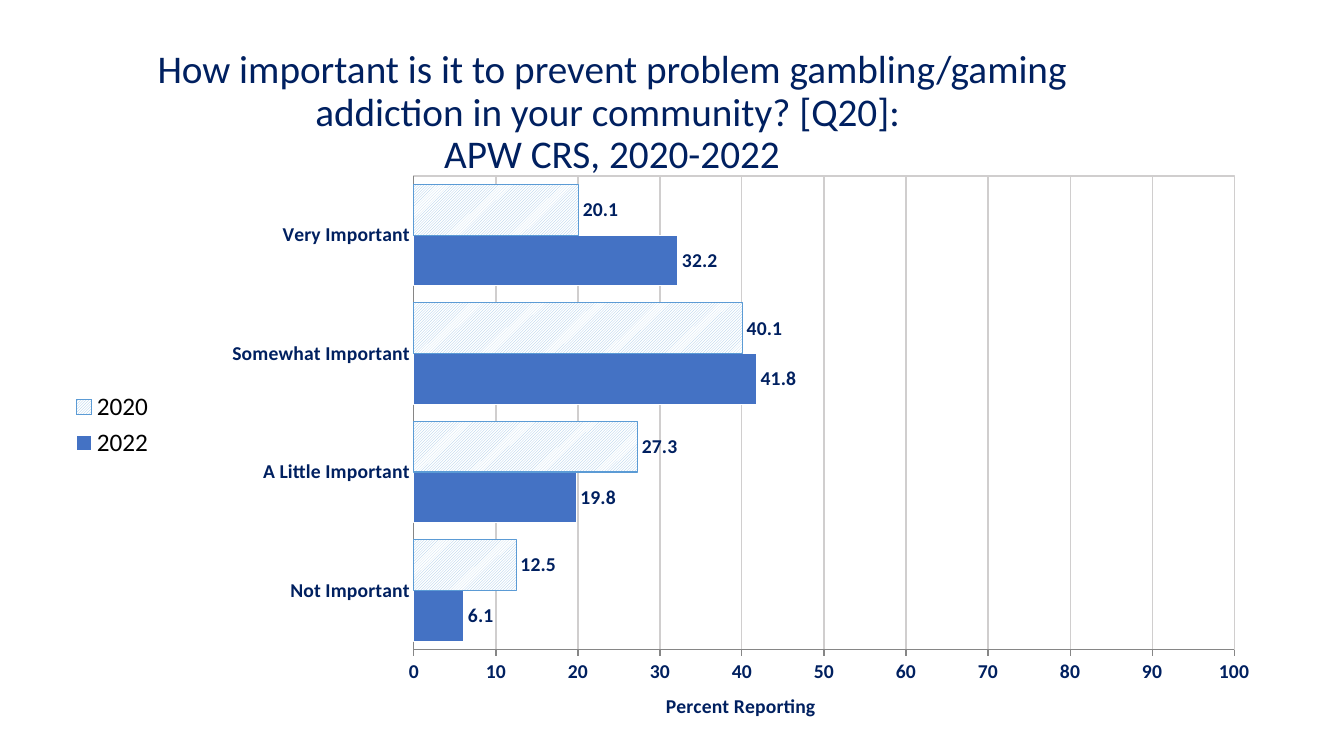
from pptx import Presentation
from pptx.chart.data import CategoryChartData
from pptx.dml.color import RGBColor
from pptx.enum.chart import (XL_CHART_TYPE, XL_LABEL_POSITION,
                             XL_LEGEND_POSITION, XL_TICK_MARK)
from pptx.enum.dml import MSO_PATTERN
from pptx.enum.text import MSO_ANCHOR, PP_ALIGN
from pptx.oxml import parse_xml
from pptx.util import Inches, Pt

BARS = XL_CHART_TYPE.BAR_CLUSTERED
OUTER = XL_LABEL_POSITION.OUTSIDE_END
LEFT = XL_LEGEND_POSITION.LEFT
NO_TICK, TICK = XL_TICK_MARK.NONE, XL_TICK_MARK.OUTSIDE
HATCH = MSO_PATTERN.LIGHT_UPWARD_DIAGONAL
MIDDLE, CENTER = MSO_ANCHOR.MIDDLE, PP_ALIGN.CENTER

COLORS = {"navy": "002060", "black": "000000", "white": "FFFFFF",
          "blue": "4472C4", "sky": "9DC3E6", "edge": "5B9BD5",
          "grid": "D0CECE", "axis": "868686"}
SPACES = ('xmlns:c="http://schemas.openxmlformats.org/drawingml/2006/chart" '
          'xmlns:a="http://schemas.openxmlformats.org/drawingml/2006/main"')
LEVELS = ["Not Important", "A Little Important",
          "Somewhat Important", "Very Important"]
YEARS = {"2022": [6.1, 19.8, 41.8, 32.2], "2020": [12.5, 27.3, 40.1, 20.1]}


def color(name):
    return RGBColor.from_string(COLORS[name])


def style(font, size=14, bold=True, tint="navy"):
    font.name = "Calibri"
    font.size = Pt(size)
    font.bold = bold
    font.color.rgb = color(tint)


def write(frame, text, align=CENTER, space=None, **look):
    para = frame.paragraphs[0]
    para.text = text
    para.alignment = align
    para.line_spacing = space
    style(para.font, **look)
    for run in para.runs:
        style(run.font, **look)


def stroke(line, tint):
    line.color.rgb = color(tint)
    line.width = Pt(0.75)


class Deck:
    def __init__(self):
        self.show = Presentation()
        self.show.slide_width = Inches(13.33)
        self.show.slide_height = Inches(7.5)
        self.slide = self.show.slides.add_slide(self.show.slide_layouts[6])

    def title(self, text, *box):
        frame = self.slide.shapes.add_textbox(*map(Inches, box)).text_frame
        frame.word_wrap = True
        frame.vertical_anchor = MIDDLE
        write(frame, text, space=0.9, size=28, bold=False)

    def chart(self, *box):
        data = CategoryChartData(number_format="0.0")
        data.categories = LEVELS
        for year, shares in YEARS.items():
            data.add_series(year, shares)
        chart = self.slide.shapes.add_chart(
            BARS, *map(Inches, box), data).chart
        chart.has_title = False
        style(chart.font, size=18, bold=False, tint="black")
        chart.has_legend = True
        chart.legend.position = LEFT
        chart.legend.include_in_layout = False
        self.axes(chart)
        self.bars(chart.plots[0])
        self.place(chart, x=0.287, y=0.085, w=0.664, h=0.79)

    def axes(self, chart):
        levels, shares = chart.category_axis, chart.value_axis
        for axis, tick in ((levels, NO_TICK), (shares, TICK)):
            style(axis.tick_labels.font)
            axis.major_tick_mark = tick
            axis.minor_tick_mark = NO_TICK
            stroke(axis.format.line, "axis")
        levels.has_major_gridlines = False
        shares.minimum_scale, shares.maximum_scale = 0, 100
        shares.major_unit = 10
        shares.tick_labels.number_format = "0"
        shares.tick_labels.number_format_is_linked = False
        shares.has_major_gridlines = True
        stroke(shares.major_gridlines.format.line, "grid")
        write(shares.axis_title.text_frame, "Percent Reporting")

    def bars(self, plot):
        plot.gap_width = 33
        plot.overlap = 0
        plot.vary_by_categories = False
        new, old = plot.series
        new.format.fill.solid()
        new.format.fill.fore_color.rgb = color("blue")
        old.format.fill.patterned()
        old.format.fill.pattern = HATCH
        old.format.fill.fore_color.rgb = color("sky")
        old.format.fill.back_color.rgb = color("white")
        for bar, edge in ((new, "white"), (old, "edge")):
            bar.invert_if_negative = False
            stroke(bar.format.line, edge)
            labels = bar.data_labels
            labels.show_value = True
            labels.position = OUTER
            labels.number_format = "0.0"
            labels.number_format_is_linked = False
            style(labels.font)

    def place(self, chart, **part):
        area = chart.element.xpath("c:chart/c:plotArea")[0]
        for spare in area.xpath("c:layout"):
            area.remove(spare)
        modes = "".join(f'<c:{key}Mode val="edge"/>' for key in "xy")
        sizes = "".join(f'<c:{key} val="{val}"/>' for key, val in part.items())
        area.insert(0, parse_xml(
            f'<c:layout {SPACES}><c:manualLayout><c:layoutTarget val="inner"/>'
            f'{modes}{sizes}</c:manualLayout></c:layout>'))
        area.append(parse_xml(
            f'<c:spPr {SPACES}><a:noFill/><a:ln w="9525"><a:solidFill>'
            f'<a:srgbClr val="{COLORS["grid"]}"/></a:solidFill></a:ln></c:spPr>'))


def main():
    deck = Deck()
    deck.title("How important is it to prevent problem gambling/gaming "
               "addiction in your community? [Q20]: \vAPW CRS, 2020-2022",
               0.92, 0.4, 10.3, 1.45)
    deck.chart(0.59, 1.24, 12.25, 5.95)
    deck.show.save("out.pptx")


if __name__ == "__main__":
    main()
